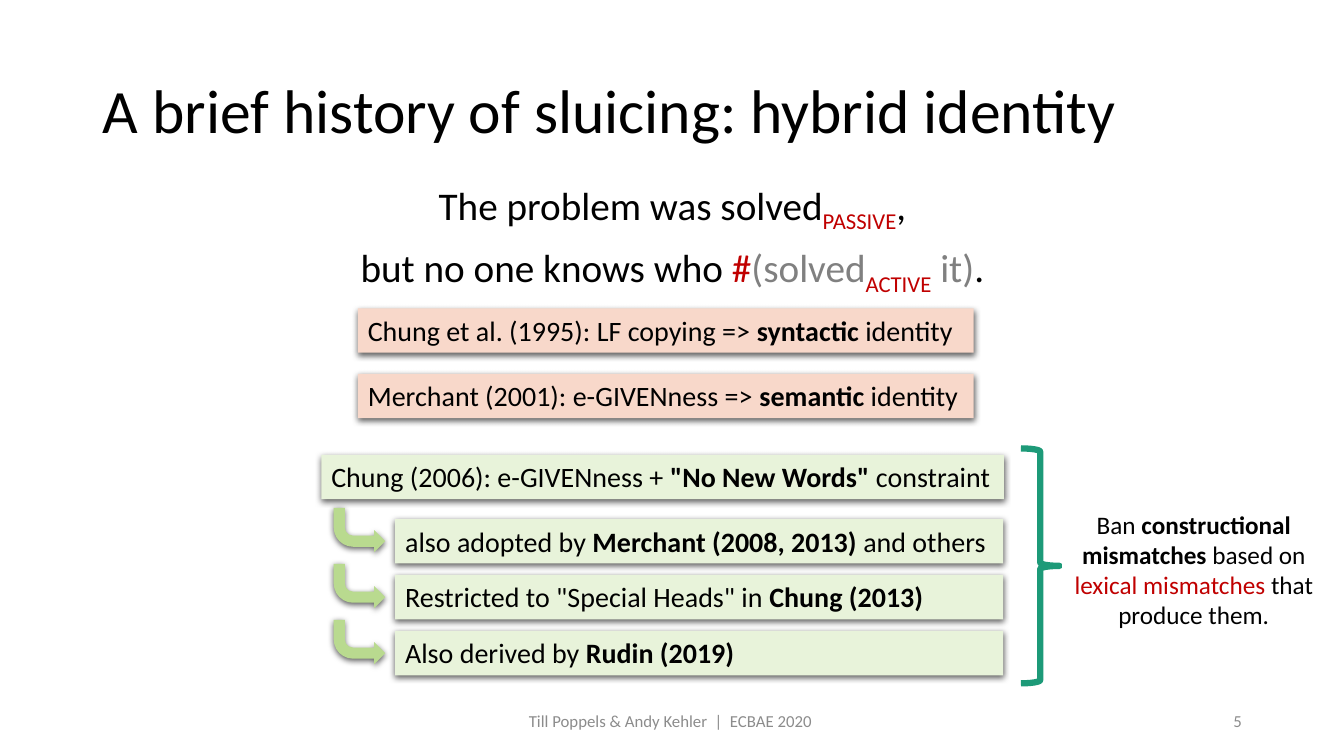
"""Build the slide on hybrid identity in the history of sluicing."""
from dataclasses import dataclass

from lxml import etree
from pptx import Presentation
from pptx.dml.color import RGBColor
from pptx.enum.shapes import MSO_SHAPE
from pptx.enum.text import MSO_ANCHOR, MSO_AUTO_SIZE, PP_ALIGN
from pptx.oxml.ns import qn
from pptx.util import Cm, Pt

LEFT, MID, RIGHT = PP_ALIGN.LEFT, PP_ALIGN.CENTER, PP_ALIGN.RIGHT
TOP, CENTRE = MSO_ANCHOR.TOP, MSO_ANCHOR.MIDDLE
FIXED = MSO_AUTO_SIZE.NONE
RECT, BENT, BRACE = MSO_SHAPE.RECTANGLE, MSO_SHAPE.BENT_ARROW, MSO_SHAPE.RIGHT_BRACE
FONT = "Calibri"
HUES = {
    "black": "000000", "white": "FFFFFF", "red": "C00000", "grey": "808080",
    "pale": "8C8C8C", "peach": "F8D8CA", "mint": "E8F3DA", "leaf": "B9DA8F",
    "teal": "1D9A78",
}
BOX_HIGH = 1.12
STEP_TOP, STEP_GAP = 13.08, 1.41


@dataclass
class Piece:
    text: str
    hue: str = "black"
    bold: bool = False
    sub: bool = False


@dataclass
class Claim:
    left: float
    top: float
    width: float
    hue: str
    words: list[Piece]


CLAIMS = [
    Claim(9.02, 7.77, 15.52, "peach", [
        Piece("Chung et al. (1995): LF copying => "),
        Piece("syntactic ", bold=True), Piece("identity")]),
    Claim(9.02, 9.42, 15.52, "peach", [
        Piece("Merchant (2001): e-GIVENness => "),
        Piece("semantic", bold=True), Piece(" identity")]),
    Claim(8.1, 11.46, 17.2, "mint", [
        Piece("Chung (2006): e-GIVENness + "),
        Piece('"No New Words" ', bold=True), Piece("constraint")]),
]
STEPS = [
    [Piece("also adopted by "), Piece("Merchant (2008, 2013)", bold=True),
     Piece(" and others")],
    [Piece('Restricted to "Special Heads" in '), Piece("Chung (2013)", bold=True)],
    [Piece("Also derived by "), Piece("Rudin (2019)", bold=True)],
]
QUOTE = [
    [Piece("The problem was solved"), Piece("PASSIVE", "red", sub=True), Piece(",")],
    [Piece("but no one knows who "), Piece("#", "red"), Piece("(solved", "grey"),
     Piece("ACTIVE", "red", sub=True), Piece(" it)", "grey"), Piece(".")],
]
NOTE = [Piece("Ban "), Piece("constructional mismatches", bold=True),
        Piece(" based on "), Piece("lexical mismatches", "red"),
        Piece(" that produce them.")]


def tint(hue: str) -> RGBColor:
    """Return the named colour."""
    return RGBColor.from_string(HUES[hue])


def write(shape, lines: list[list[Piece]], size: float, align=LEFT, anchor=TOP) -> None:
    """Fill a shape with lines of formatted pieces."""
    frame = shape.text_frame
    frame.word_wrap = True
    frame.auto_size = FIXED
    frame.vertical_anchor = anchor
    frame.text = "\n".join(line[0].text for line in lines)
    for para, line in zip(frame.paragraphs, lines):
        para.alignment = align
        for piece in line[1:]:
            para.add_run().text = piece.text
        for run, piece in zip(para.runs, line):
            font = run.font
            font.name, font.size, font.bold = FONT, Pt(size), piece.bold
            font.color.rgb = tint(piece.hue)
            if piece.sub:
                font._element.set("baseline", "-25000")


def place(shape, left: float, top: float, width: float, height: float) -> None:
    """Move and size a placeholder."""
    shape.left, shape.top = Cm(left), Cm(top)
    shape.width, shape.height = Cm(width), Cm(height)


def draw(slide, kind, left: float, top: float, width: float, height: float, hue: str):
    """Add a filled shape with no line or shadow."""
    shape = slide.shapes.add_shape(kind, Cm(left), Cm(top), Cm(width), Cm(height))
    shape.fill.solid()
    shape.fill.fore_color.rgb = tint(hue)
    shape.line.fill.background()
    shape.shadow.inherit = False
    return shape


def shade(shape) -> None:
    """Give a shape a soft shadow below it."""
    glow = shape._element.spPr.find(qn("a:effectLst"))
    outer = etree.SubElement(glow, qn("a:outerShdw"), blurRad=str(Pt(4.5)),
                             dist=str(Pt(1.5)), dir="5400000",
                             algn="ctr", rotWithShape="0")
    black = etree.SubElement(outer, qn("a:srgbClr"), val=HUES["black"])
    etree.SubElement(black, qn("a:alpha"), val="63000")


def add_claim(slide, claim: Claim) -> None:
    """Draw one claim in its shaded box."""
    box = draw(slide, RECT, claim.left, claim.top, claim.width, BOX_HIGH, claim.hue)
    shade(box)
    write(box, [claim.words], 20)


def add_step(slide, top: float, words: list[Piece]) -> None:
    """Draw a follow-up claim with its bent arrow."""
    add_claim(slide, Claim(9.96, top, 15.32, "mint", words))
    arrow = draw(slide, BENT, 8.41, top - 0.28, 1.3, BOX_HIGH, "leaf")
    arrow._element.spPr.get_or_add_xfrm().set("flipV", "1")
    shade(arrow)


def add_label(slide, left: float, width: float, text: str, align) -> None:
    """Write a small grey label at the foot."""
    box = slide.shapes.add_textbox(Cm(left), Cm(17.65), Cm(width), Cm(1.02))
    write(box, [[Piece(text, "pale")]], 12, align, CENTRE)


def add_heads(slide) -> None:
    """Fill the title and body placeholders."""
    title, body = slide.shapes.title, slide.placeholders[1]
    place(title, 2.34, 1.02, 29.21, 3.68)
    write(title, [[Piece("A brief history of sluicing: hybrid identity")]], 44,
          LEFT, CENTRE)
    title.text_frame.paragraphs[0].line_spacing = 0.9
    place(body, 2.34, 4.45, 29.21, 3.3)
    write(body, QUOTE, 28, MID)
    for para in body.text_frame.paragraphs:
        para.line_spacing, para.space_before = 0.9, Pt(10)
        props = para._element.get_or_add_pPr()
        props.set("marL", "0")
        props.set("indent", "0")
        etree.SubElement(props, qn("a:buNone"))


def main() -> None:
    """Build and save the slide."""
    deck = Presentation()
    deck.slide_width, deck.slide_height = Cm(33.87), Cm(19.05)
    slide = deck.slides.add_slide(deck.slide_layouts[1])
    add_heads(slide)
    add_label(slide, 23.93, 7.62, "5", RIGHT)
    add_label(slide, 11.23, 11.43, "Till Poppels & Andy Kehler  |  ECBAE 2020 ", MID)
    for claim in CLAIMS:
        add_claim(slide, claim)
    for rank, words in enumerate(STEPS):
        add_step(slide, STEP_TOP + rank * STEP_GAP, words)
    brace = draw(slide, BRACE, 25.73, 11.3, 0.97, 5.92, "white")
    brace.fill.background()
    brace.line.color.rgb = tint("teal")
    brace.line.width = Pt(4.5)
    note = draw(slide, RECT, 26.77, 12.7, 6.63, 3.33, "white")
    write(note, [NOTE], 18, MID)
    deck.save("out.pptx")


if __name__ == "__main__":
    main()
